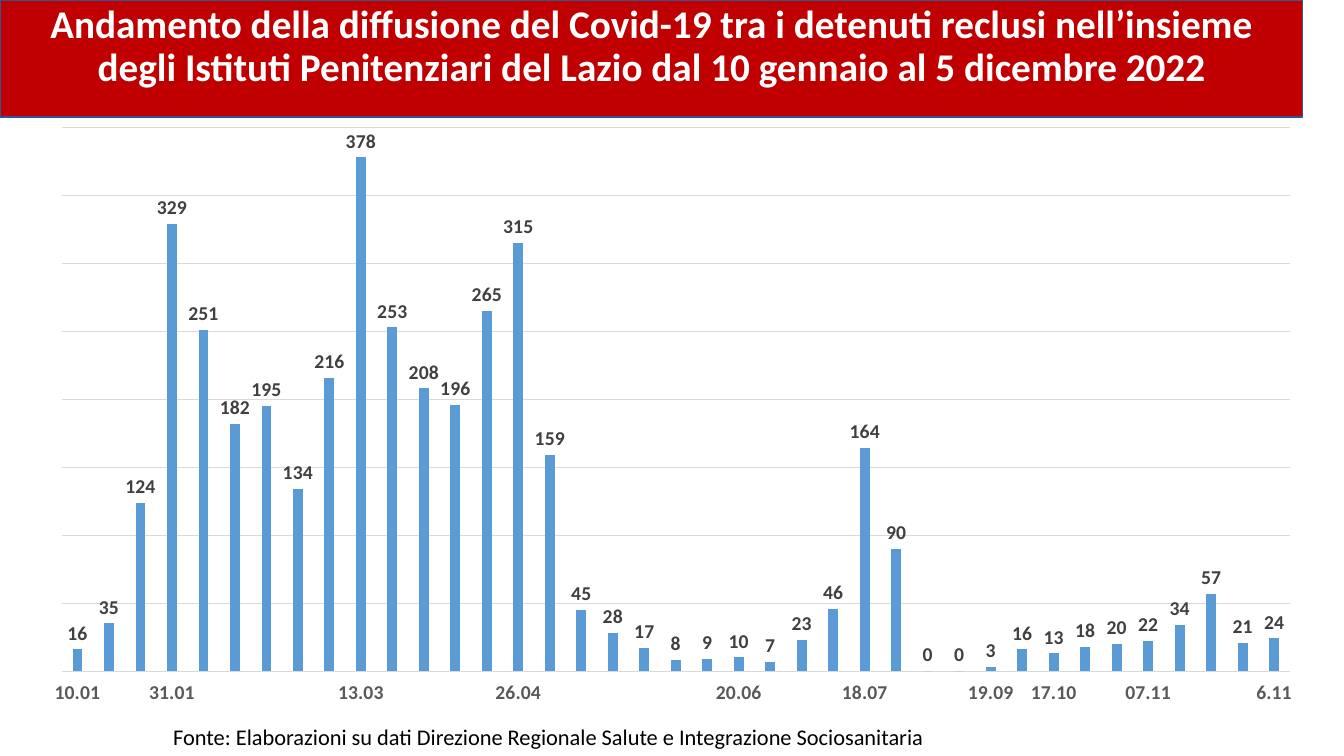
from lxml import etree
from pptx import Presentation
from pptx.chart.data import CategoryChartData
from pptx.dml.color import RGBColor
from pptx.enum.chart import XL_CHART_TYPE, XL_LABEL_POSITION, XL_TICK_LABEL_POSITION, XL_TICK_MARK
from pptx.enum.text import MSO_ANCHOR, MSO_AUTO_SIZE, PP_ALIGN
from pptx.oxml.ns import qn
from pptx.util import Pt

PX = 9144  # 100 px to the inch
THEME = {
    "font": "Calibri",
    "banner": "C00000", "banner_line": "325491", "banner_text": "FFFFFF",
    "bar": "5B9BD5", "grid": "D9D9D9",
    "axis_text": "595959", "label_text": "404040", "text": "000000",
    "title_size": 28, "source_size": 16, "chart_size": 14,
}
CASES = [16, 35, 124, 329, 251, 182, 195, 134, 216, 378, 253, 208, 196,
         265, 315, 159, 45, 28, 17, 8, 9, 10, 7, 23, 46, 164,
         90, 0, 0, 3, 16, 13, 18, 20, 22, 34, 57, 21, 24]
DATES = {0: "10.01", 3: "31.01", 9: "13.03", 14: "26.04", 21: "20.06",
         25: "18.07", 29: "19.09", 31: "17.10", 34: "07.11", 38: "6.11"}


def color(name):
    return RGBColor.from_string(THEME[name])


def style(font, size, color_name, bold=False):
    font.name = THEME["font"]
    font.size = Pt(THEME[size])
    font.bold = bold
    font.color.rgb = color(color_name)


prs = Presentation()
prs.slide_width, prs.slide_height = 1333 * PX, 750 * PX
s = prs.slides.add_slide(prs.slide_layouts[5])

# Chart
data = CategoryChartData()
data.categories = [DATES.get(week, "") for week in range(len(CASES))]
data.add_series("Detenuti positivi", CASES)
chart = s.shapes.add_chart(XL_CHART_TYPE.COLUMN_CLUSTERED, 31 * PX, 116 * PX,
                           1261 * PX, 585 * PX, data).chart
chart.has_legend = False
chart.has_title = False
style(chart.font, "chart_size", "text")

plot = chart.plots[0]
plot.gap_width = 219
plot.overlap = -27
plot.vary_by_categories = False
bars = plot.series[0].format.fill
bars.solid()
bars.fore_color.rgb = color("bar")

plot.has_data_labels = True
labels = plot.data_labels
labels.show_value = True
labels.position = XL_LABEL_POSITION.OUTSIDE_END
style(labels.font, "chart_size", "label_text", bold=True)

dates = chart.category_axis
dates.major_tick_mark = dates.minor_tick_mark = XL_TICK_MARK.NONE
dates.tick_label_position = XL_TICK_LABEL_POSITION.LOW
style(dates.tick_labels.font, "chart_size", "axis_text", bold=True)

values = chart.value_axis
values.minimum_scale, values.maximum_scale, values.major_unit = 0, 400, 50
values.has_major_gridlines = True
values.visible = False
for line in (dates.format.line, values.major_gridlines.format.line):
    line.color.rgb = color("grid")
    line.width = Pt(0.75)

# Fixed inner plot area
area = chart.element.find(".//" + qn("c:plotArea"))
layout = area.find(qn("c:layout"))
if layout is None:
    layout = etree.Element(qn("c:layout"))
    area.insert(0, layout)
manual = etree.SubElement(layout, qn("c:manualLayout"))
for tag, val in (("layoutTarget", "inner"), ("xMode", "edge"), ("yMode", "edge"),
                 ("x", 0.024), ("y", 0.018), ("w", 0.966), ("h", 0.922)):
    etree.SubElement(manual, qn("c:" + tag)).set("val", str(val))

# Title banner
title = s.shapes.title
title.left, title.top, title.width, title.height = 0, 0, 1292 * PX, 116 * PX
title.fill.solid()
title.fill.fore_color.rgb = color("banner")
title.line.color.rgb = color("banner_line")
title.line.width = Pt(1)
tf = title.text_frame
tf.text = ("Andamento della diffusione del Covid-19 tra i detenuti reclusi nell’insieme "
           "degli Istituti Penitenziari del Lazio dal 10 gennaio al 5 dicembre 2022")
tf.word_wrap = True
tf.auto_size = MSO_AUTO_SIZE.NONE
tf.vertical_anchor = MSO_ANCHOR.TOP
p = tf.paragraphs[0]
p.alignment = PP_ALIGN.CENTER
p.line_spacing = 0.9
style(p.runs[0].font, "title_size", "banner_text", bold=True)

# Source line
source = s.shapes.add_textbox(162 * PX, 713 * PX, 784 * PX, 37 * PX)
tf = source.text_frame
tf.text = "Fonte: Elaborazioni su dati Direzione Regionale Salute e Integrazione Sociosanitaria"
tf.word_wrap = False
tf.auto_size = MSO_AUTO_SIZE.SHAPE_TO_FIT_TEXT
style(tf.paragraphs[0].runs[0].font, "source_size", "text")

prs.save("out.pptx")
